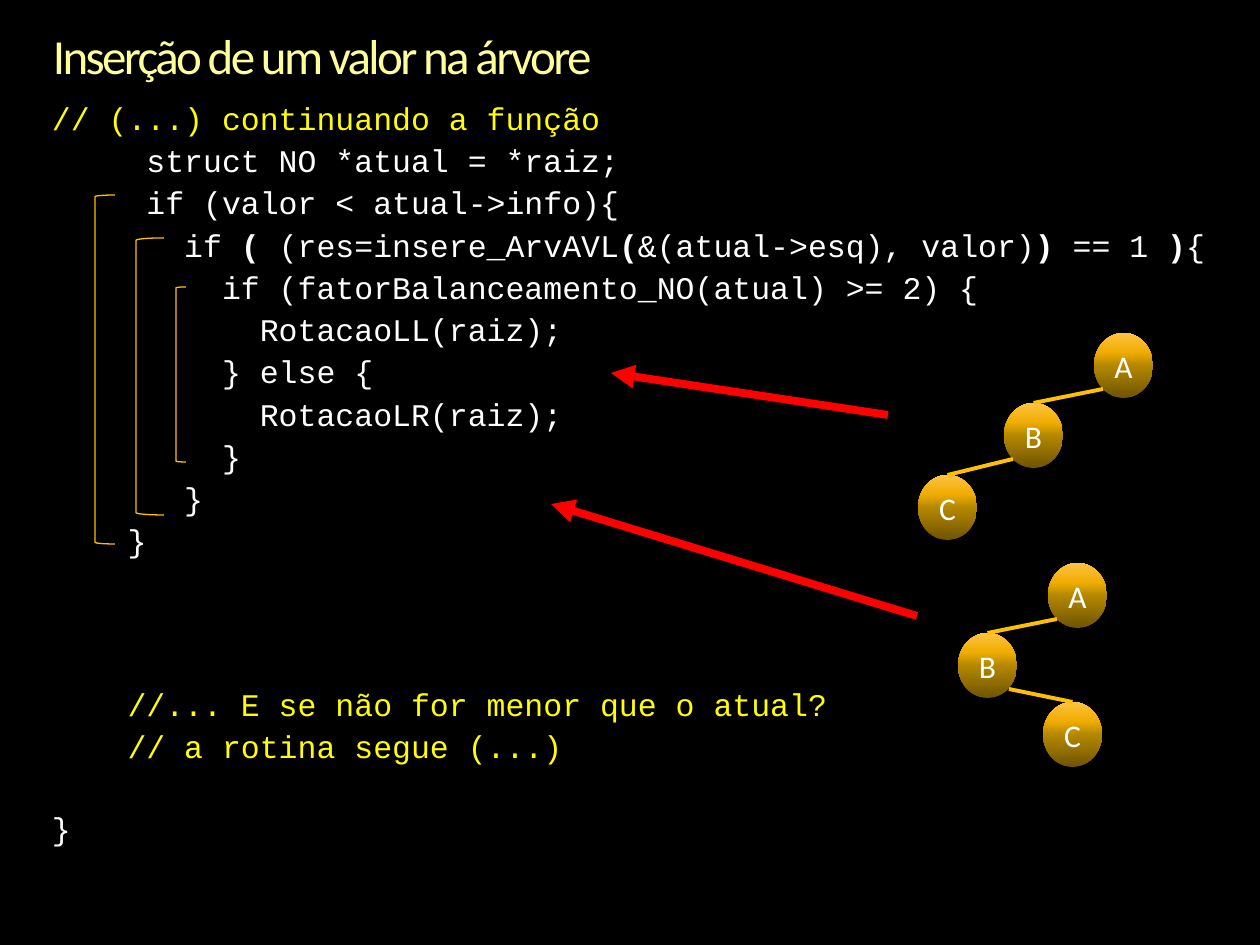
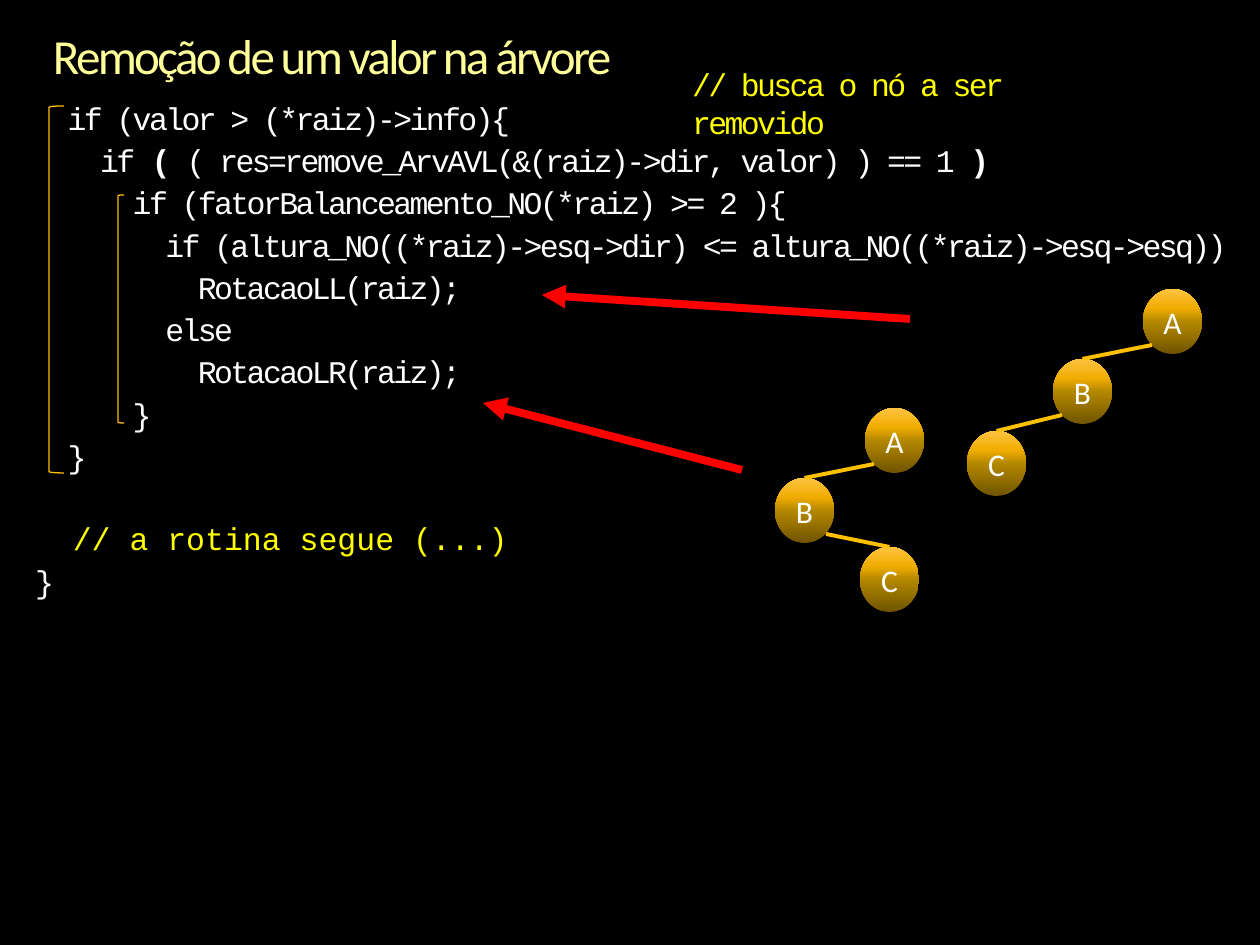
import pptx
import pptx.dml.color
import pptx.enum.shapes
import pptx.enum.text
import pptx.oxml.ns
import pptx.util
from lxml import etree

qn = pptx.oxml.ns.qn
Pt = pptx.util.Pt
SHAPE = pptx.enum.shapes.MSO_SHAPE
LINE = pptx.enum.shapes.MSO_CONNECTOR.STRAIGHT
ALIGN = pptx.enum.text.PP_ALIGN
ANCHOR = pptx.enum.text.MSO_ANCHOR

BLACK, WHITE, YELLOW = "000000", "FFFFFF", "FFFF00"
CREAM, GOLD, RED = "FFFF99", "FFC000", "FF0000"
GLOSS = [(0, "705400"), (50, "B48800"), (70, "F0AC00"), (100, "FFC342")]
SANS, MONO = "Calibri", "Courier New"
PITCH, GAP = 23.05, 4.7  # points from line to line, and the space before a line
BALL_W, BALL_H = 59, 65
TIGHT = -1.5


def px(n):
    return round(n * 914400 / 126)


def rgb(code):
    return pptx.dml.color.RGBColor.from_string(code)


class Deck:
    def __init__(self):
        self.prs = pptx.Presentation()
        self.prs.slide_width = px(1260)
        self.prs.slide_height = px(945)
        self.slide = None

    def start(self, title):
        """Add a black slide with its title."""
        self.slide = self.prs.slides.add_slide(self.prs.slide_layouts[6])
        fill = self.slide.background.fill
        fill.solid()
        fill.fore_color.rgb = rgb(BLACK)
        par = self.frame(53, 32, 1155, 53).paragraphs[0]
        par.text = title
        par.line_spacing = 0.9
        self.style(par, 28, SANS, CREAM, TIGHT)

    def frame(self, x, y, w, h, inset=0):
        box = self.slide.shapes.add_textbox(px(x), px(y), px(w), px(h))
        text = box.text_frame
        text.word_wrap = True
        text.margin_left = text.margin_right = px(inset)
        text.margin_top = text.margin_bottom = px(inset / 2)
        return text

    def style(self, par, size, face, color, track=0):
        for run in par.runs:
            run.font.size = Pt(size)
            run.font.name = face
            run.font.color.rgb = rgb(color)
            if track:
                run._r.get_or_add_rPr().set("spc", str(round(track * 100)))

    def code(self, x, y, w, h, source, track=0):
        """Set code lines; bars enclose bold parts, empty lines become space."""
        text = self.frame(x, y, w, h)
        skip = 0
        par = None
        for line in source.strip("\n").split("\n"):
            if not line:
                skip += 1
                continue
            if par is None:
                par = text.paragraphs[0]
            else:
                par = text.add_paragraph()
                par.space_before = Pt(round(GAP + skip * PITCH, 2))
            skip = 0
            par.line_spacing = 0.9
            for i, part in enumerate(line.split("|")):
                run = par.add_run()
                run.text = part
                run.font.bold = i % 2 == 1
            note = line.strip().startswith("//")
            self.style(par, 18, MONO, YELLOW if note else WHITE, 0 if note else track)

    def note(self, x, y, w, h, words):
        par = self.frame(x, y, w, h, 12).paragraphs[0]
        par.text = words
        self.style(par, 18, MONO, YELLOW, TIGHT)

    def bracket(self, x, y, w, h):
        shape = self.slide.shapes.add_shape(
            SHAPE.LEFT_BRACKET, px(x), px(y), px(w), px(h))
        shape.shadow.inherit = False
        shape.fill.background()
        shape.line.color.rgb = rgb(GOLD)
        shape.line.width = Pt(0.75)

    def link(self, host, x1, y1, x2, y2, color, width):
        line = host.add_connector(LINE, px(x1), px(y1), px(x2), px(y2))
        line.line.color.rgb = rgb(color)
        line.line.width = Pt(width)
        etree.SubElement(line._element.spPr, qn("a:effectLst"))
        return line

    def arrow(self, x1, y1, x2, y2):
        line = self.link(self.slide.shapes, x1, y1, x2, y2, RED, 4.5)
        etree.SubElement(line.line._get_or_add_ln(), qn("a:tailEnd"), type="triangle")

    def ball(self, host, x, y, name):
        shape = host.add_shape(SHAPE.OVAL, px(x), px(y), px(BALL_W), px(BALL_H))
        shape.shadow.inherit = False
        shape.line.fill.background()
        shape.fill.gradient()
        shape.fill.gradient_angle = 90
        stops = shape._element.spPr.find(".//" + qn("a:gsLst"))
        for old in list(stops):
            stops.remove(old)
        for pos, code in GLOSS:
            stop = etree.SubElement(stops, qn("a:gs"), pos=str(pos * 1000))
            etree.SubElement(stop, qn("a:srgbClr"), val=code)
        text = shape.text_frame
        text.margin_left = text.margin_right = text.margin_top = text.margin_bottom = 0
        text.vertical_anchor = ANCHOR.MIDDLE
        par = text.paragraphs[0]
        par.text = name
        par.alignment = ALIGN.CENTER
        self.style(par, 18, SANS, WHITE)
        return shape

    def tree(self, x, y, bent=False):
        """Draw A-B-C from A's corner, with C to the right of B if bent."""
        host = self.slide.shapes.add_group_shape().shapes
        bx, by = x - 90, y + 70
        cx, cy = (x - 5, y + 139) if bent else (x - 176, y + 142)
        self.ball(host, x, y, "A")
        for px0, py0, kx, ky, name, side in (
                (x, y, bx, by, "B", 9),
                (bx, by, cx, cy, "C", 51 if bent else 9)):
            kid = self.ball(host, kx, ky, name)
            edge = self.link(host, px0 + side, py0 + 56,
                             kx + BALL_W / 2, ky, GOLD, 2.25)
            edge.end_connect(kid, 0)


INSERT = """
// (...) continuando a função
     struct NO *atual = *raiz;
     if (valor < atual->info){
       if |(| (res=insere_ArvAVL|(|&(atual->esq), valor)|)| == 1 |)|{
         if (fatorBalanceamento_NO(atual) >= 2) {
           RotacaoLL(raiz);
         } else {
           RotacaoLR(raiz);
         }
       }
    }



    //... E se não for menor que o atual?
    // a rotina segue (...)

}
"""

REMOVE = """
  if (valor > (*raiz)->info){
    if |(| ( res=remove_ArvAVL(&(raiz)->dir, valor) ) == 1 |)|
      if (fatorBalanceamento_NO(*raiz) >= 2 ){
        if (altura_NO((*raiz)->esq->dir) <= altura_NO((*raiz)->esq->esq))
          RotacaoLL(raiz);
        else
          RotacaoLR(raiz);
      }
  }

  // a rotina segue (...)
}
"""


def main():
    deck = Deck()

    deck.start("Inserção de um valor na árvore")
    deck.code(52, 103, 1183, 748, INSERT)
    for spot in ((95, 195, 20, 349), (136, 238, 28, 277), (176, 287, 10, 175)):
        deck.bracket(*spot)
    deck.tree(1094, 333)
    deck.tree(1048, 563, bent=True)
    deck.arrow(888, 415, 611, 373)
    deck.arrow(917, 616, 551, 504)

    deck.start("Remoção de um valor na árvore")
    deck.code(35, 103, 1201, 496, REMOVE, TIGHT)
    deck.note(680, 59, 420, 50, "// busca o nó a ser removido")
    for spot in ((49, 106, 15, 367), (118, 195, 6, 228)):
        deck.bracket(*spot)
    deck.tree(1143, 289)
    deck.tree(865, 408, bent=True)
    deck.arrow(910, 319, 542, 295)
    deck.arrow(742, 470, 483, 403)

    deck.prs.save("out.pptx")


if __name__ == "__main__":
    main()
